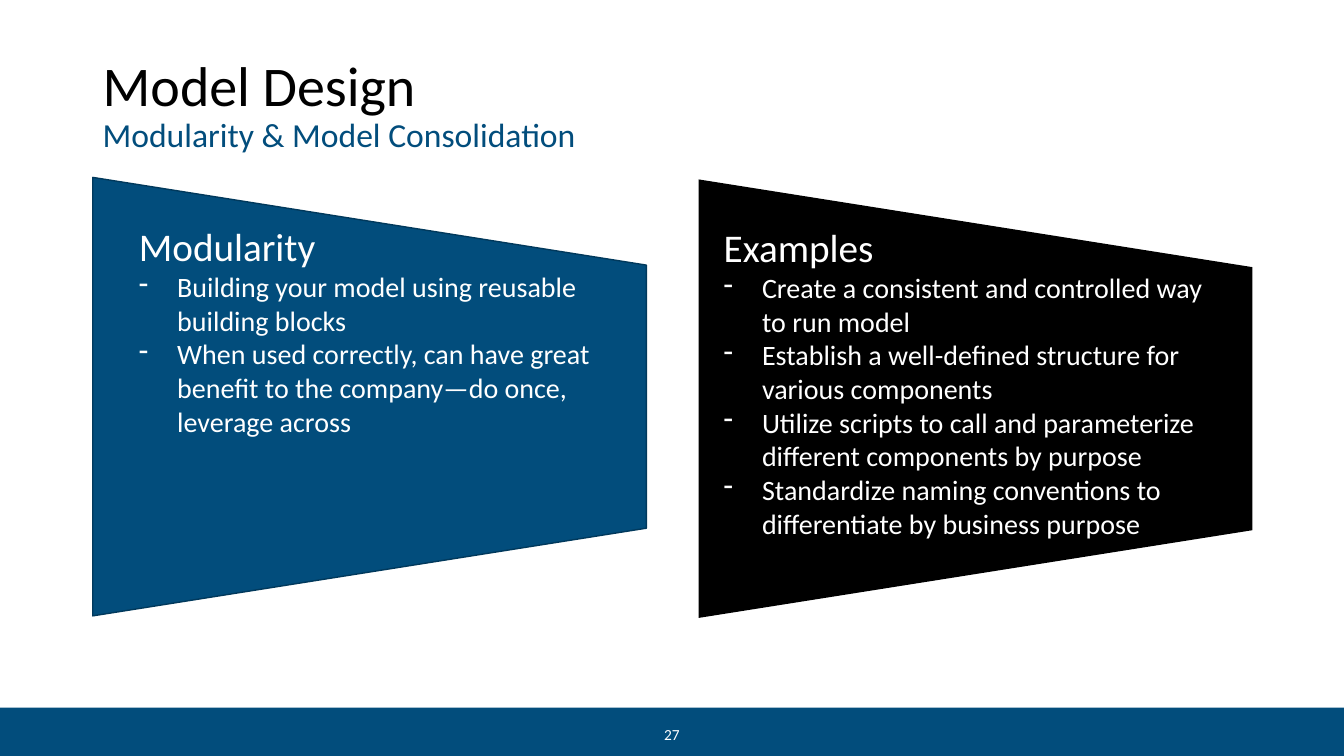
from lxml import etree
from pptx import Presentation
from pptx.dml.color import RGBColor
from pptx.enum.shapes import MSO_SHAPE as SHAPE
from pptx.enum.text import MSO_ANCHOR as ANCHOR, PP_ALIGN as ALIGN
from pptx.oxml.ns import qn
from pptx.util import Inches, Pt

COLORS = {"blue": "024D7C", "navy": "01395C", "black": "000000", "white": "FFFFFF"}
FONT = "Calibri"
PANELS = [
    dict(left=1.49, top=1.19, fill="blue", line="navy",
         text_box=(1.28, 2.16, 4.67, 3.13), heading="Modularity",
         bullets=["Building your model using reusable building blocks",
                  "When used correctly, can have great benefit to the "
                  "company—do once, leverage across"]),
    dict(left=7.5, top=1.21, fill="black", line=None,
         text_box=(7.08, 2.17, 4.97, 4.14), heading="Examples",
         bullets=["Create a consistent and controlled way to run model",
                  "Establish a well-defined structure for various components",
                  "Utilize scripts to call and parameterize different "
                  "components by purpose",
                  "Standardize naming conventions to differentiate by "
                  "business purpose"]),
]


def rgb(name):
    return RGBColor.from_string(COLORS[name])


def add_panel(s, kind, box, fill, line=None, rotation=0):
    sp = s.shapes.add_shape(kind, *map(Inches, box))
    sp.shadow.inherit = False
    sp.rotation = rotation
    sp.fill.solid()
    sp.fill.fore_color.rgb = rgb(fill)
    if line:
        sp.line.color.rgb = rgb(line)
        sp.line.width = Pt(1)
    else:
        sp.line.fill.background()


def add_text_frame(s, box, anchor=ANCHOR.TOP):
    tf = s.shapes.add_textbox(*map(Inches, box)).text_frame
    tf.word_wrap = True
    tf.vertical_anchor = anchor
    return tf


def add_run(p, text, size, color="white"):
    r = p.add_run()
    r.text = text
    r.font.name = FONT
    r.font.size = Pt(size)
    r.font.color.rgb = rgb(color)


def set_dash_bullet(p):
    pPr = p._p.get_or_add_pPr()
    pPr.set("marL", str(Inches(0.38)))
    pPr.set("indent", str(-Inches(0.38)))
    etree.SubElement(pPr, qn("a:buFontTx"))
    etree.SubElement(pPr, qn("a:buChar")).set("char", "-")


def add_title(s, title, subtitle):
    p = add_text_frame(s, (0.92, 0.36, 11.5, 1.4), ANCHOR.MIDDLE).paragraphs[0]
    p.line_spacing = 0.9
    add_run(p, title, 40, "black")
    p.add_line_break()
    add_run(p, subtitle, 24, "blue")


def add_bullet_list(s, box, heading, bullets):
    tf = add_text_frame(s, box)
    add_run(tf.paragraphs[0], heading, 28)
    for bullet in bullets:
        p = tf.add_paragraph()
        set_dash_bullet(p)
        add_run(p, bullet, 20)


def add_footer(s, number):
    add_panel(s, SHAPE.RECTANGLE, (0, 7.02, 13.33, 0.48), "blue")
    p = add_text_frame(s, (6.31, 7.17, 0.71, 0.22), ANCHOR.MIDDLE).paragraphs[0]
    p.alignment = ALIGN.CENTER
    add_run(p, number, 11)


def main():
    prs = Presentation()
    prs.slide_width, prs.slide_height = Inches(13.33), Inches(7.5)
    s = prs.slides.add_slide(prs.slide_layouts[6])
    add_footer(s, "27")
    add_title(s, "Model Design", "Modularity & Model Consolidation")
    for panel in PANELS:
        add_panel(s, SHAPE.FLOWCHART_MANUAL_OPERATION,
                  (panel["left"], panel["top"], 4.35, 5.49),
                  panel["fill"], panel["line"], rotation=270)
        add_bullet_list(s, panel["text_box"], panel["heading"], panel["bullets"])
    prs.save("out.pptx")


if __name__ == "__main__":
    main()
